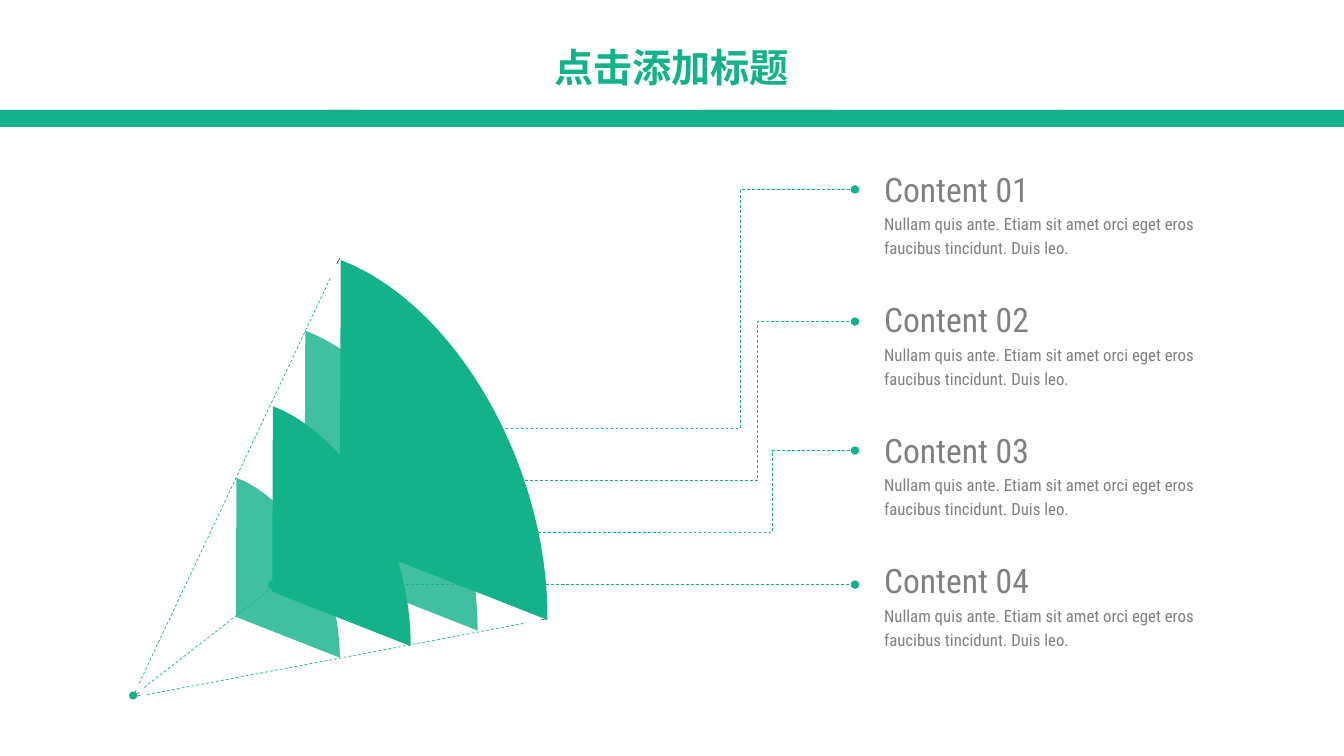
import pptx
import pptx.util
import pptx.dml.color
import pptx.enum.dml
import pptx.enum.shapes
import pptx.enum.text
import pptx.oxml
from pptx.oxml.ns import qn
from lxml import etree

Inches = pptx.util.Inches
Pt = pptx.util.Pt
RGBColor = pptx.dml.color.RGBColor
MSO_SHAPE = pptx.enum.shapes.MSO_SHAPE
MSO_CONNECTOR = pptx.enum.shapes.MSO_CONNECTOR

GREEN = RGBColor(0x14, 0xB2, 0x8B)
SLATE = RGBColor(0x50, 0x6C, 0x74)
GRAY = RGBColor(0x80, 0x80, 0x80)
HEADING_FONT = "Noto Sans CJK SC"
BODY_FONT = "Roboto Condensed"

# Content
TITLE = "点击添加标题"
DETAIL = "Nullam quis ante. Etiam sit amet orci eget eros faucibus tincidunt. Duis leo."
# heading, its top, detail, detail top, leader start, leader end, x of the leader's bend
ITEMS = [
    ("Content 01", 1.63, DETAIL, 2.03, (4.73, 4.25), (8.48, 1.88), 7.34),
    ("Content 02", 2.92, DETAIL, 3.33, (3.98, 4.77), (8.48, 3.19), 7.51),
    ("Content 03", 4.22, DETAIL, 4.62, (3.37, 5.28), (8.48, 4.47), 7.66),
    ("Content 04", 5.51, DETAIL, 5.92, (2.70, 5.80), (8.48, 5.80), 5.59),
]
BAND_PARTS = [(-0.01, 3.56), (3.25, 5.02), (6.95, 3.61), (10.48, 2.87)]  # left, width
VANISHING_POINT = (1.32, 6.91)
# near stub end, dash start, dash end, far stub start, far stub end
RAYS = [
    ((1.39, 6.90), (1.46, 6.89), (5.22, 6.18), (5.36, 6.15), (5.43, 6.14)),
    ((1.35, 6.85), (1.38, 6.78), (3.28, 2.75), (3.34, 2.62), (3.37, 2.56)),
    ((1.38, 6.87), (1.43, 6.82), (3.19, 5.45), (3.31, 5.37), (3.36, 5.33)),
]
SAIL_CORNERS = [(3.37, 5.34), (3.02, 5.58), (2.70, 5.87), (2.34, 6.12)]
# Front sail measured from its corner: tip, corner, top, then the curve back to the tip
SAIL_OUTLINE = [(2.06, 0.81), (0, 0), (0.01, -2.76),
                (1.15, -2.32), (2.07, -0.72), (2.06, 0.81)]

deck = pptx.Presentation()
deck.slide_width, deck.slide_height = Inches(13.33), Inches(7.5)
slide = deck.slides.add_slide(deck.slide_layouts[5])
shapes = slide.shapes


def paint(shape, alpha=None):
    shape.shadow.inherit = False
    shape.fill.solid()
    shape.fill.fore_color.rgb = GREEN
    shape.line.fill.background()
    if alpha:
        color = shape.fill._xPr.find(qn("a:solidFill"))[0]
        etree.SubElement(color, qn("a:alpha"), val=str(alpha * 1000))


def add_line(start, end, color=GREEN, dashed=True, kind=MSO_CONNECTOR.STRAIGHT):
    line = shapes.add_connector(kind, *(Inches(v) for v in (*start, *end)))
    line.line.color.rgb = color
    line.line.width = Pt(0.5)
    if dashed:
        line.line.dash_style = pptx.enum.dml.MSO_LINE.DASH
    etree.SubElement(line._element.spPr, qn("a:effectLst"))
    return line


def add_leader(start, end, bend_x):
    leader = add_line(start, end, kind=MSO_CONNECTOR.ELBOW)
    for end_tag in ("a:headEnd", "a:tailEnd"):
        etree.SubElement(leader.line._ln, qn(end_tag), type="oval")
    share = (bend_x - start[0]) / (end[0] - start[0])
    guides = leader._element.spPr.find(qn("a:prstGeom")).get_or_add_avLst()
    etree.SubElement(guides, qn("a:gd"), name="adj1", fmla=f"val {round(share * 100000)}")


def add_sail(x, y, scale, alpha):
    tip, *rest = [(Inches(x + scale * dx), Inches(y + scale * dy)) for dx, dy in SAIL_OUTLINE]
    builder = shapes.build_freeform(*tip)
    builder.add_line_segments(rest, close=False)
    sail = builder.convert_to_shape()
    # The last three points become one Bezier curve
    outline = next(sail._element.iter(qn("a:path")))
    curve = etree.SubElement(outline, qn("a:cubicBezTo"))
    for segment in outline.findall(qn("a:lnTo"))[-3:]:
        curve.append(segment[0])
        outline.remove(segment)
    paint(sail, alpha)


def add_text(text, top, width, height, size, spacing=None):
    box = shapes.add_textbox(Inches(8.67), Inches(top), Inches(width), Inches(height))
    box.text_frame.word_wrap = True
    paragraph = box.text_frame.paragraphs[0]
    paragraph.text = text
    if spacing:
        paragraph.line_spacing = spacing
    paragraph.font.size = Pt(size)
    paragraph.font.name = BODY_FONT
    paragraph.font.color.rgb = GRAY


# Title
title = shapes.title
title.left, title.top, title.width, title.height = map(Inches, (2.78, 0.38, 7.76, 0.87))
title_frame = title.text_frame
title_frame.text = TITLE
title_frame.word_wrap = True
title_frame.auto_size = pptx.enum.text.MSO_AUTO_SIZE.NONE
title_frame.vertical_anchor = pptx.enum.text.MSO_ANCHOR.TOP
heading = title_frame.paragraphs[0]
heading.alignment = pptx.enum.text.PP_ALIGN.CENTER
heading.font.size = Pt(28)
heading.font.bold = True
heading.font.color.rgb = GREEN
heading.font.name = HEADING_FONT
latin = heading._p.pPr.find(qn("a:defRPr")).find(qn("a:latin"))
east_asian = pptx.oxml.parse_xml(
    '<a:ea xmlns:a="http://schemas.openxmlformats.org/drawingml/2006/main"/>')
east_asian.set("typeface", HEADING_FONT)
latin.addnext(east_asian)

# Band under the title
for left, width in BAND_PARTS:
    paint(shapes.add_shape(MSO_SHAPE.RECTANGLE, Inches(left), Inches(1.09),
                           Inches(width), Inches(0.17)))

# Perspective rays
for near, dash_start, dash_end, far_start, far_end in RAYS:
    add_line(far_start, far_end, SLATE, dashed=False)
    add_line(dash_start, dash_end)
    add_line(VANISHING_POINT, near, SLATE, dashed=False)

# Sails, each smaller than the one in front by a sixth of the first
for i, (x, y) in enumerate(SAIL_CORNERS):
    add_sail(x, y, scale=1 - i / 6, alpha=81 if i % 2 else None)

# Vanishing point
paint(shapes.add_shape(MSO_SHAPE.OVAL, Inches(1.28), Inches(6.86), Inches(0.08), Inches(0.08)))

# Leaders, then their texts
for *_, start, end, bend_x in ITEMS:
    add_leader(start, end, bend_x)
for name, name_top, detail, detail_top, *_ in ITEMS:
    add_text(name, name_top, 3.33, 0.46, 24)
    add_text(detail, detail_top, 3.7, 0.55, 12, spacing=1.2)

deck.save("out.pptx")
